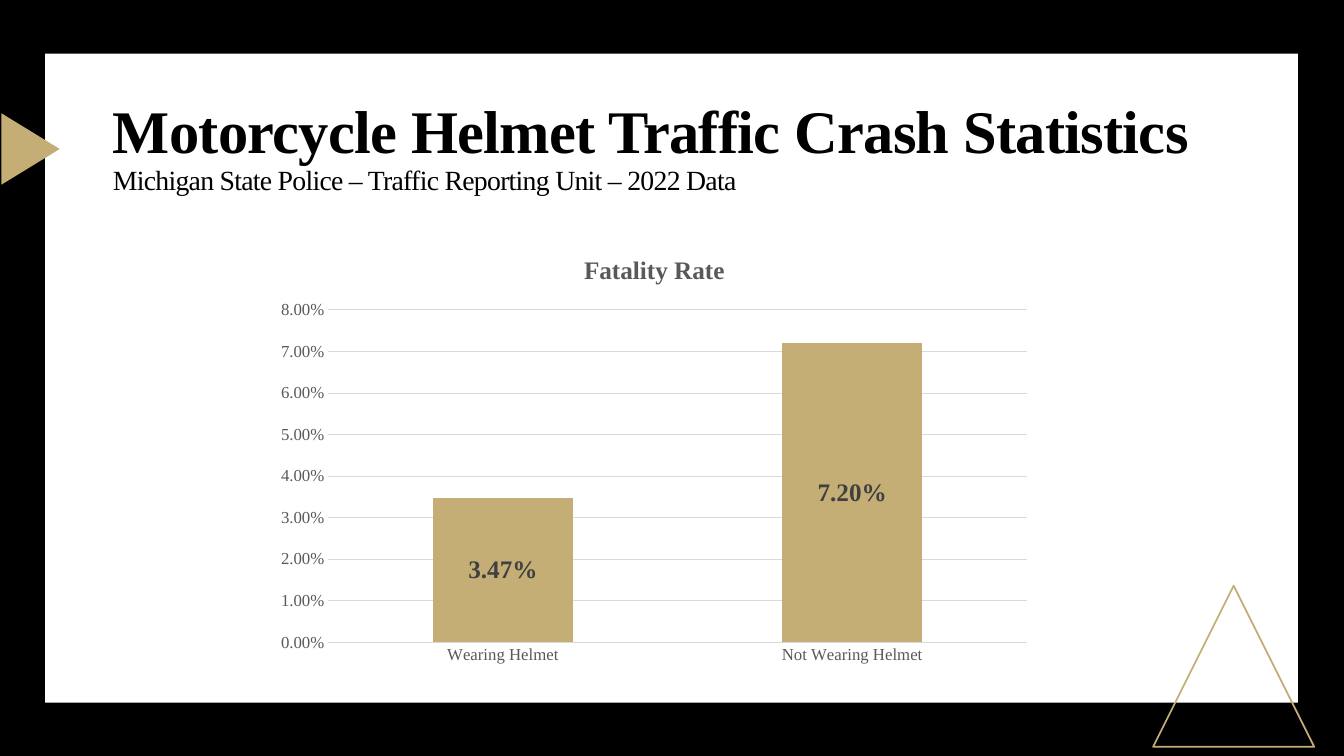
from pptx import Presentation
from pptx.chart.data import CategoryChartData
from pptx.dml.color import RGBColor
from pptx.enum.chart import XL_CHART_TYPE, XL_LABEL_POSITION, XL_TICK_MARK
from pptx.enum.shapes import MSO_SHAPE
from pptx.enum.text import MSO_ANCHOR, MSO_AUTO_SIZE, PP_ALIGN
from pptx.oxml import parse_xml
from pptx.oxml.ns import nsdecls
from pptx.util import Cm, Pt

# Content
HEAD = "Motorcycle Helmet Traffic Crash Statistics"
SOURCE = "Michigan State Police – Traffic Reporting Unit – 2022 Data"
CHART = "Fatality Rate"
RATES = {"Wearing Helmet": 0.0347, "Not Wearing Helmet": 0.072}
PERCENT = "0.00%"

# Places in cm: left, top, width, height
PANEL = (1.14, 1.35, 31.57, 16.36)
PEAK = (29.06, 14.76, 4.06, 4.06)
ARROW = (-0.13, 3.02, 1.8, 1.47)
GRAPH = (6.71, 5.94, 19.56, 11.02)
TITLE = (2.59, 2.49, 29.03, 2.54)
PLOT = {"x": 0.08, "y": 0.17, "w": 0.9, "h": 0.76}  # shares of the chart


class Theme:
    font = "Times New Roman"
    black = RGBColor.from_string("000000")
    white = RGBColor.from_string("FFFFFF")
    gold = RGBColor.from_string("C4AE75")
    gray = RGBColor.from_string("595959")
    dark = RGBColor.from_string("404040")
    grid = RGBColor.from_string("D9D9D9")
    head, source, label, axis = Pt(43.2), Pt(19.8), Pt(18), Pt(12)


def place(box):
    return [Cm(n) for n in box]


def style(font, size, color, bold=False):
    font.name, font.size, font.bold = Theme.font, size, bold
    font.color.rgb = color


def draw(kind, box, fill=None, line=None):
    shape = slide.shapes.add_shape(kind, *place(box))
    shape.shadow.inherit = False
    if fill is None:
        shape.fill.background()
    else:
        shape.fill.solid()
        shape.fill.fore_color.rgb = fill
    if line is None:
        shape.line.fill.background()
    else:
        shape.line.color.rgb = line
        shape.line.width = Pt(1.25)
    return shape


deck = Presentation()
deck.slide_width, deck.slide_height = Cm(33.87), Cm(19.05)
slide = deck.slides.add_slide(deck.slide_layouts[5])

# Backdrop
back = slide.background.fill
back.solid()
back.fore_color.rgb = Theme.black
draw(MSO_SHAPE.RECTANGLE, PANEL, fill=Theme.white)
draw(MSO_SHAPE.ISOSCELES_TRIANGLE, PEAK, line=Theme.gold)
draw(MSO_SHAPE.ISOSCELES_TRIANGLE, ARROW, fill=Theme.gold).rotation = 90

# Chart
data = CategoryChartData(number_format=PERCENT)
data.categories = list(RATES)
data.add_series("Series 1", list(RATES.values()))
chart = slide.shapes.add_chart(
    XL_CHART_TYPE.COLUMN_STACKED, *place(GRAPH), data).chart
chart.has_legend = False
chart.has_title = True
chart.chart_title.include_in_layout = False
label = chart.chart_title.text_frame
label.text = CHART
style(label.paragraphs[0].runs[0].font, Theme.label, Theme.gray, True)

# Bars
plot = chart.plots[0]
plot.gap_width, plot.overlap = 150, 100
plot.vary_by_categories = False
bars = plot.series[0]
bars.format.fill.solid()
bars.format.fill.fore_color.rgb = Theme.gold
tags = bars.data_labels
tags.show_value = True
tags.number_format, tags.number_format_is_linked = PERCENT, False
tags.position = XL_LABEL_POSITION.CENTER
style(tags.font, Theme.label, Theme.dark, True)

# Axes
for axis in (chart.category_axis, chart.value_axis):
    axis.major_tick_mark = axis.minor_tick_mark = XL_TICK_MARK.NONE
    axis.format.line.fill.background()
    style(axis.tick_labels.font, Theme.axis, Theme.gray)
scale = chart.value_axis
scale.minimum_scale, scale.maximum_scale, scale.major_unit = 0, 0.08, 0.01
scale.tick_labels.number_format = PERCENT
scale.tick_labels.number_format_is_linked = False
rule = scale.major_gridlines.format.line
rule.color.rgb = Theme.grid
rule.width = Pt(0.75)

# Fixed plot area inside the chart
area = chart.element.chart.plotArea
for old in area.findall("{*}layout"):
    area.remove(old)
modes = "".join(f'<c:{k}Mode val="edge"/>' for k in "xy")
sizes = "".join(f'<c:{k} val="{v}"/>' for k, v in PLOT.items())
area.insert(0, parse_xml(
    f'<c:layout {nsdecls("c")}><c:manualLayout><c:layoutTarget val="inner"/>'
    f"{modes}{sizes}</c:manualLayout></c:layout>"))

# Title, brought in front of the panel
title = slide.shapes.title
title.left, title.top, title.width, title.height = place(TITLE)
slide.shapes.element.append(title.element)
frame = title.text_frame
frame.text = f"{HEAD}\v{SOURCE}"
frame.word_wrap = True
frame.auto_size = MSO_AUTO_SIZE.NONE
frame.vertical_anchor = MSO_ANCHOR.MIDDLE
para = frame.paragraphs[0]
para.alignment, para.line_spacing = PP_ALIGN.LEFT, 0.9
looks = ((Theme.head, True), (Theme.source, False))
for run, (size, bold) in zip(para.runs, looks):
    style(run.font, size, Theme.black, bold)
    run.font.element.set("spc", "-50") if hasattr(run.font, "element") \
        else run._r.get_or_add_rPr().set("spc", "-50")

deck.save("out.pptx")
